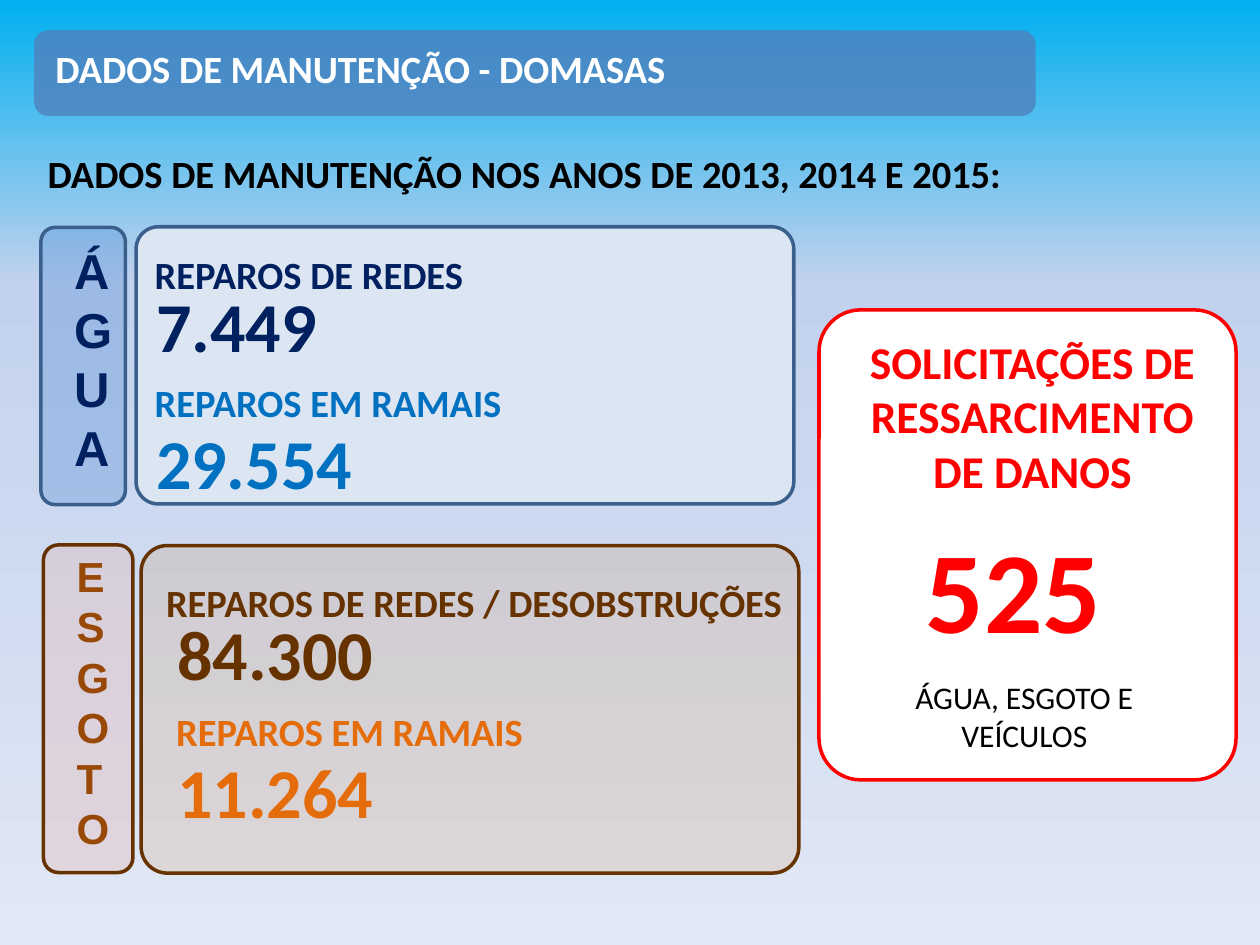
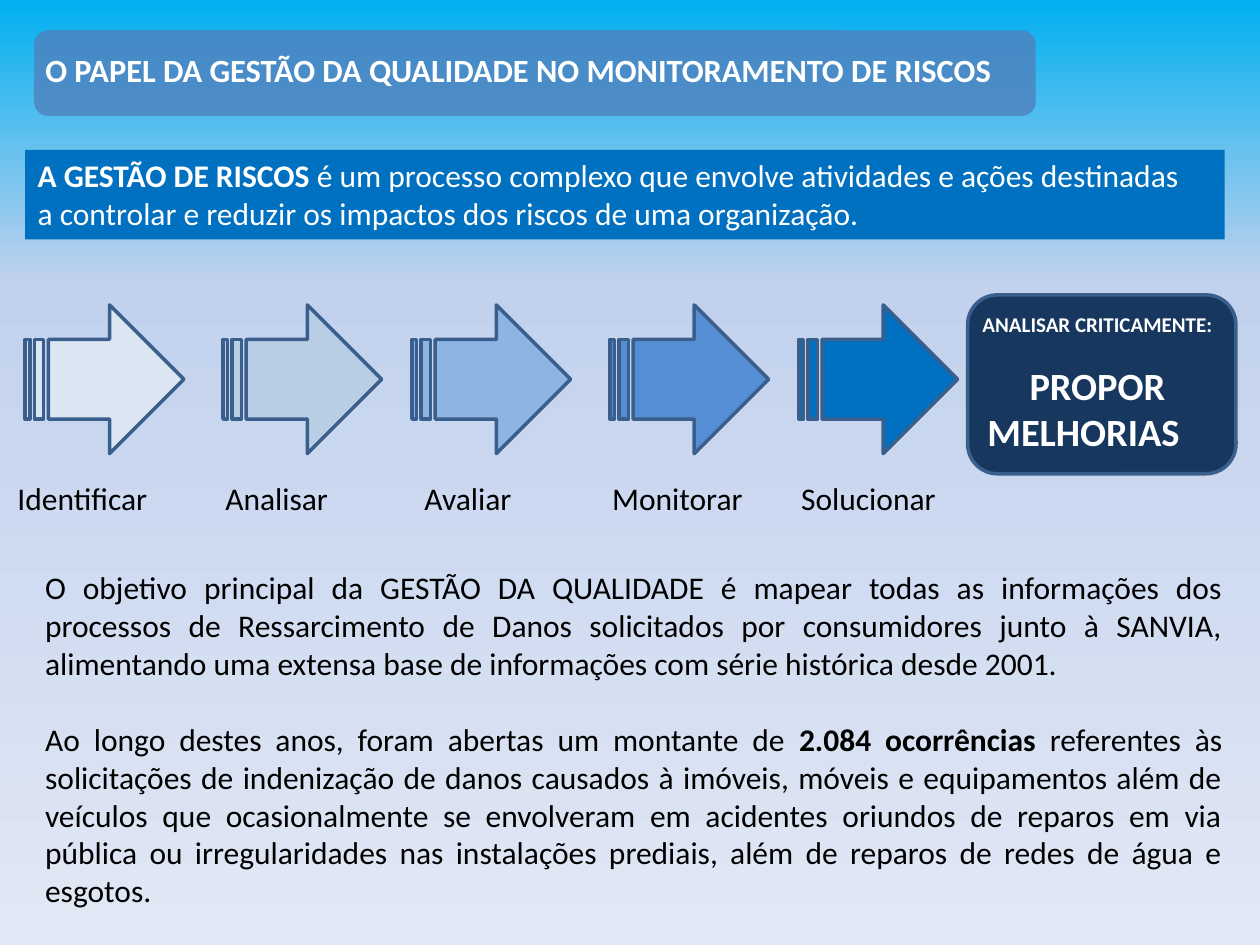
from copy import deepcopy
from dataclasses import dataclass

from lxml.etree import SubElement
from pptx import Presentation
from pptx.dml.color import RGBColor
from pptx.enum.shapes import MSO_SHAPE
from pptx.enum.text import MSO_ANCHOR, MSO_AUTO_SIZE, PP_ALIGN
from pptx.oxml.ns import qn
from pptx.util import Inches, Pt


@dataclass(frozen=True)
class Theme:
    font: str = "Calibri"
    stacked_font: str = "Arial"
    white: str = "FFFFFF"
    black: str = "000000"
    red: str = "FF0000"
    navy: str = "002060"
    blue: str = "0070C0"
    midnight: str = "17375E"
    outline: str = "3A5F8C"
    band: str = "4F81BD"
    water: str = "558ED5"
    water_panel: str = "DCE6F2"
    brown: str = "663300"
    rust: str = "984807"
    orange: str = "E46C0A"
    sewer: str = "E6B9B8"
    sewer_panel: str = "CC6600"
    sky: tuple = ((0, "00B0F0"), (0.3, "C2D1ED"), (1, "E1E8F5"))
    arrows: tuple = ("DCE6F2", "B9CDE5", "8EB4E3", "558ED5", "0070C0")
    note: int = 12
    body: int = 18
    long_title: float = 18.5
    heading: int = 22
    sewer_letters: int = 24
    claim: int = 26
    water_letters: int = 28
    value: int = 40
    hero: int = 66


theme = Theme()
deck = Presentation()
deck.slide_width, deck.slide_height = Inches(10), Inches(7.5)
CELL = deck.slide_width / 100  # square grid: 100 columns by 75 rows


def draw(slide, cells, preset=None, fill=None, alpha=100, line=None, adjustments=()):
    """Add a preset shape, or a text box when no preset is given; cells are left, top, width, height."""
    lengths = [round(cell * CELL) for cell in cells]
    if preset is None:
        return slide.shapes.add_textbox(*lengths)
    shape = slide.shapes.add_shape(preset, *lengths)
    shape.shadow.inherit = False
    shape.fill.solid()
    shape.fill.fore_color.rgb = RGBColor.from_string(fill)
    if alpha < 100:
        color = shape.element.xpath("./p:spPr/a:solidFill/a:srgbClr")[0]
        SubElement(color, qn("a:alpha")).set("val", str(alpha * 1000))
    if line:
        shape.line.color.rgb = RGBColor.from_string(line)
        shape.line.width = Pt(2)
    else:
        shape.line.fill.background()
    for index, value in enumerate(adjustments):
        shape.adjustments[index] = value
    return shape


def write(box, *paragraphs, size, color, bold=False, font=theme.font, align=PP_ALIGN.LEFT):
    """Fill a box; a paragraph is a string or a list of (text, font overrides)."""
    frame = box.text_frame
    for name, value in {"word_wrap": True, "auto_size": MSO_AUTO_SIZE.NONE,
                        "vertical_anchor": MSO_ANCHOR.TOP}.items():
        setattr(frame, name, value)
    for index, spans in enumerate(paragraphs):
        para = frame.add_paragraph() if index else frame.paragraphs[0]
        para.alignment = align
        for text, overrides in [(spans, {})] if isinstance(spans, str) else spans:
            span = para.add_run()
            span.text = text
            span.font.color.rgb = RGBColor.from_string(color)
            formats = {"name": font, "size": Pt(size), "bold": bold} | overrides
            for name, value in formats.items():
                setattr(span.font, name, value)


# Shared sky background
master = deck.slide_master
sky = master.background.fill
sky.gradient()
sky.gradient_angle = 270
stop_list = master.element.xpath("./p:cSld/p:bg//a:gsLst")[0]
stop_list.insert(1, deepcopy(stop_list[0]))
for stop, (position, color) in zip(sky.gradient_stops, theme.sky):
    stop.position = position
    stop.color.rgb = RGBColor.from_string(color)

# Slides with their titles; the band moves to the layout they share
layout = deck.slide_layouts.get_by_name("Title Only")
titles = [
    ("DADOS DE MANUTENÇÃO - DOMASAS", theme.heading, (3.4, 3.1, 78.9, 4.7)),
    ("O PAPEL DA GESTÃO DA QUALIDADE NO MONITORAMENTO DE RISCOS", theme.long_title,
     (2.6, 3.5, 80.3, 4.2)),
]
for text, size, cells in titles:
    slide = deck.slides.add_slide(layout)
    title = slide.shapes.title
    for name, cell in zip(("left", "top", "width", "height"), cells):
        setattr(title, name, round(cell * CELL))
    write(title, text, size=size, color=theme.white, bold=True)
maintenance, quality = deck.slides
band = draw(maintenance, (2.7, 2.4, 79.5, 6.8), MSO_SHAPE.ROUNDED_RECTANGLE, theme.band, alpha=80)
layout.shapes.element.append(band.element)

# Slide 1: maintenance figures
write(draw(maintenance, (2.8, 11.4, 89.9, 4.7)),
      "DADOS DE MANUTENÇÃO NOS ANOS DE 2013, 2014 E 2015:",
      size=theme.heading, color=theme.black, bold=True)

services = [
    {"name": "ÁGUA", "letters": (4.9, 18.6, 5.5, 20.9), "size": theme.water_letters,
     "color": theme.navy, "line": theme.outline,
     "tab": (3.25, 18.05, 6.7, 22), "tab_fill": (theme.water, 34),
     "panel": (10.8, 18, 52.2, 22), "panel_fill": (theme.water_panel, 100),
     "figures": [("REPAROS DE REDES", "7.449", theme.navy, 11.3, 19.4, 2.5),
                 ("REPAROS EM RAMAIS", "29.554", theme.blue, 11.3, 29.6, 3.2)],
     "value_left": 11.4},
    {"name": "ESGOTO", "letters": (5.1, 43.2, 5.5, 26.3), "size": theme.sewer_letters,
     "color": theme.rust, "line": theme.brown,
     "tab": (3.45, 43.25, 7.1, 26), "tab_fill": (theme.sewer, 36),
     "panel": (11.2, 43.3, 52.2, 26), "panel_fill": (theme.sewer_panel, 12),
     "figures": [("REPAROS DE REDES / DESOBSTRUÇÕES", "84.300", theme.brown, 12.2, 45.5, 2.5),
                 ("REPAROS EM RAMAIS", "11.264", theme.orange, 13, 55.7, 3.2)],
     "value_left": 13.1},
]
for service in services:
    for part, adjustments in (("panel", [0.08]), ("tab", [])):
        fill, alpha = service[part + "_fill"]
        draw(maintenance, service[part], MSO_SHAPE.ROUNDED_RECTANGLE, fill, alpha,
             service["line"], adjustments)
    write(draw(maintenance, service["letters"]), service["name"], size=service["size"],
          color=service["color"], bold=True, font=theme.stacked_font)
    for label, value, color, left, top, drop in service["figures"]:
        write(draw(maintenance, (left, top, 51.7, 4.7)), label,
              size=theme.heading, color=color, bold=True)
        write(draw(maintenance, (service["value_left"], top + drop, 37.9, 7.7)), value,
              size=theme.value, color=color, bold=True)

draw(maintenance, (65, 24.6, 33.1, 37.3), MSO_SHAPE.ROUNDED_RECTANGLE, theme.white,
     line=theme.red, adjustments=[0.1])
claims = [
    ((66.1, 26, 31.7, 14.1), ["SOLICITAÇÕES DE RESSARCIMENTO", "DE DANOS"],
     theme.claim, theme.red, True),
    ((63.9, 40.6, 33.1, 12.1), ["525"], theme.hero, theme.red, True),
    ((67.8, 53.3, 27, 7.1), ["ÁGUA, ESGOTO E VEÍCULOS"], theme.body, theme.black, False),
]
for cells, lines, size, color, bold in claims:
    write(draw(maintenance, cells), *lines, size=size, color=color, bold=bold,
          align=PP_ALIGN.CENTER)

# Slide 2: role of quality management
definition = draw(quality, (2, 11.9, 95.2, 7.1), MSO_SHAPE.RECTANGLE, theme.blue)
write(definition,
      [("A GESTÃO DE RISCOS ", {"bold": True}),
       ("é um processo complexo que envolve atividades e ações destinadas", {})],
      "a controlar e reduzir os impactos dos riscos de uma organização.",
      size=theme.body, color=theme.white)

draw(quality, (76.8, 23.4, 21.3, 14.2), MSO_SHAPE.ROUNDED_RECTANGLE, theme.midnight,
     line=theme.outline)
outcome = draw(quality, (73, 24.2, 26, 12.5))
write(outcome, [("ANALISAR CRITICAMENTE:", {"size": Pt(theme.note)})], "PROPOR", "MELHORIAS",
      size=theme.heading, color=theme.white, bold=True, align=PP_ALIGN.CENTER)
lead, proposal = outcome.text_frame.paragraphs[:2]
proposal.space_before = Pt(14.6)
for para in (lead, proposal):
    para._p.get_or_add_pPr().set("marL", str(round(2.2 * CELL)))

steps = [("Identificar", 2, 0.4), ("Analisar", 17.7, 16.9), ("Avaliar", 32.7, 32.7),
         ("Monitorar", 48.4, 47.6), ("Solucionar", 63.4, 62.6)]
for (step, arrow_left, label_left), fill in zip(steps, theme.arrows):
    draw(quality, (arrow_left, 24.2, 12.6, 11.8), MSO_SHAPE.STRIPED_RIGHT_ARROW, fill,
         line=theme.outline, adjustments=[0.535, 0.5])
    write(draw(quality, (label_left, 37.5, 14.2, 4)), step, size=theme.body, color=theme.black)

purpose = draw(quality, (2.6, 44.6, 95.4, 28.3))
write(purpose,
      "O objetivo principal da GESTÃO DA QUALIDADE é mapear todas as informações dos processos "
      "de Ressarcimento de Danos solicitados por consumidores junto à SANVIA, alimentando uma "
      "extensa base de informações com série histórica desde 2001.",
      [("Ao longo destes anos, foram abertas um montante de ", {}),
       ("2.084 ocorrências ", {"bold": True}),
       ("referentes às solicitações de indenização de danos causados à imóveis, móveis e "
        "equipamentos além de veículos que ocasionalmente se envolveram em acidentes oriundos de "
        "reparos em via pública ou irregularidades nas instalações prediais, além de reparos de "
        "redes de água e esgotos.", {})],
      size=theme.body, color=theme.black, align=PP_ALIGN.JUSTIFY)
purpose.text_frame.paragraphs[1].space_before = Pt(22)

deck.save("out.pptx")
